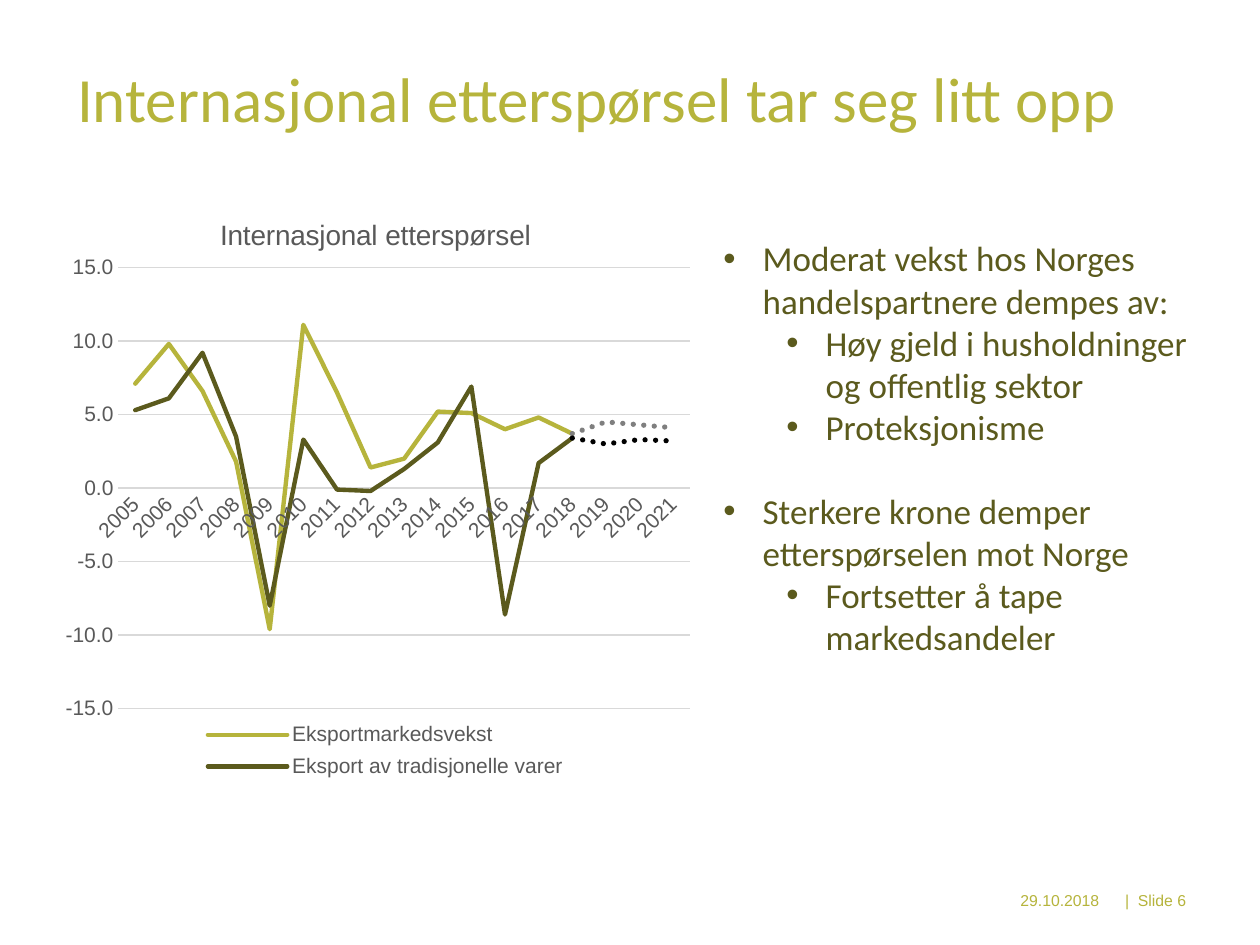
from lxml import etree
from pptx import Presentation
from pptx.chart.data import CategoryChartData
from pptx.dml.color import RGBColor
from pptx.enum.chart import XL_CHART_TYPE, XL_LEGEND_POSITION, XL_MARKER_STYLE, XL_TICK_MARK
from pptx.enum.dml import MSO_LINE
from pptx.enum.text import MSO_ANCHOR, MSO_AUTO_SIZE, PP_ALIGN
from pptx.oxml.ns import qn
from pptx.util import Cm, Pt

LINE_CHART = XL_CHART_TYPE.LINE
BOTTOM = XL_LEGEND_POSITION.BOTTOM
NO_MARKER = XL_MARKER_STYLE.NONE
NO_TICK = XL_TICK_MARK.NONE
SOLID, DOTTED = MSO_LINE.SOLID, MSO_LINE.ROUND_DOT
MIDDLE, TOP = MSO_ANCHOR.MIDDLE, MSO_ANCHOR.TOP
LEFT, RIGHT = PP_ALIGN.LEFT, PP_ALIGN.RIGHT
NO_AUTOFIT = MSO_AUTO_SIZE.NONE

COLORS = {
    "lime": "B6B43C", "olive": "5B5A1D", "gray": "7F7F7F",
    "black": "000000", "label": "595959", "grid": "D9D9D9",
}
YEARS = [str(year) for year in range(2005, 2022)]
FORECAST_START = YEARS.index("2018")
HISTORY_GAP = [None] * FORECAST_START
FORECAST_GAP = [None] * (len(YEARS) - FORECAST_START - 1)
SERIES = [  # name, values, colour, width, dash
    ("Eksportmarkedsvekst",
     [7.1, 9.8, 6.6, 1.8, -9.6, 11.1, 6.5, 1.4, 2, 5.2, 5.1, 4, 4.8, 3.7] + FORECAST_GAP,
     "lime", 2.5, SOLID),
    ("Eksport av tradisjonelle varer",
     [5.3, 6.1, 9.2, 3.5, -8, 3.3, -0.1, -0.2, 1.3, 3.1, 6.9, -8.6, 1.7, 3.4] + FORECAST_GAP,
     "olive", 2.5, SOLID),
    ("", HISTORY_GAP + [3.7, 4.5, 4.3, 4.1], "gray", 3, DOTTED),
    ("", HISTORY_GAP + [3.4, 3, 3.3, 3.2], "black", 3, DOTTED),
]
POINTS = [  # level, text, space before
    (0, "Moderat vekst hos Norges handelspartnere dempes av:", 0),
    (1, "Høy gjeld i husholdninger og offentlig sektor", 0),
    (1, "Proteksjonisme", 0),
    (0, "Sterkere krone demper etterspørselen mot Norge", 24),
    (1, "Fortsetter å tape markedsandeler", 0),
]


def rgb(name):
    return RGBColor.from_string(COLORS[name])


def set_font(font, color, size, name="Arial"):
    values = {"name": name, "size": Pt(size), "bold": False}
    for attribute, value in values.items():
        setattr(font, attribute, value)
    font.color.rgb = rgb(color)


def place(shape, box):
    for attribute, value in zip(("left", "top", "width", "height"), box):
        setattr(shape, attribute, Cm(value))


def add_title(slide, box):
    title = slide.shapes.title
    place(title, box)
    frame = title.text_frame
    frame.text = "Internasjonal etterspørsel tar seg litt opp"
    frame.auto_size = NO_AUTOFIT
    frame.vertical_anchor = MIDDLE
    heading = frame.paragraphs[0]
    heading.alignment = LEFT
    heading.line_spacing = 0.9
    set_font(heading.font, "lime", 36, "Calibri")


def add_points(slide, box):
    body = slide.placeholders[1]
    place(body, box)
    frame = body.text_frame
    frame.auto_size = NO_AUTOFIT
    frame.vertical_anchor = TOP
    for index, (level, text, gap) in enumerate(POINTS):
        point = frame.add_paragraph() if index else frame.paragraphs[0]
        point.text = text
        point.level = level
        point.space_before = Pt(gap)
        properties = point._p.get_or_add_pPr()
        properties.set("marL", str(Cm(0.79 + 1.27 * level)))
        properties.set("indent", str(Cm(-0.79)))
        etree.SubElement(properties, qn("a:buFont"), typeface="Arial")
        etree.SubElement(properties, qn("a:buChar"), char="•")
        set_font(point.font, "olive", 20, "Calibri")


def set_layout(parent, position, **values):
    """Fix the place of a chart part, in fractions of the chart."""
    for old in parent.findall(qn("c:layout")):
        parent.remove(old)
    layout = etree.Element(qn("c:layout"))
    manual = etree.SubElement(layout, qn("c:manualLayout"))
    for tag, value in values.items():
        etree.SubElement(manual, qn("c:" + tag), val=str(value))
    parent.insert(position, layout)


def format_axes(chart):
    years, growth = chart.category_axis, chart.value_axis
    for axis in (years, growth):
        axis.major_tick_mark = axis.minor_tick_mark = NO_TICK
        set_font(axis.tick_labels.font, "label", 12)
    years.has_major_gridlines = False
    years.tick_labels.font._element.getparent().getparent().getparent()
    slant = years._element.find(qn("c:txPr")).find(qn("a:bodyPr"))
    slant.set("rot", str(-45 * 60000))
    slant.set("vert", "horz")
    scale = {"minimum_scale": -15, "maximum_scale": 15, "major_unit": 5,
             "has_major_gridlines": True}
    for attribute, value in scale.items():
        setattr(growth, attribute, value)
    growth.tick_labels.number_format = "0.0"
    growth.tick_labels.number_format_is_linked = False
    growth.format.line.fill.background()
    for line in (years.format.line, growth.major_gridlines.format.line):
        line.color.rgb = rgb("grid")
        line.width = Pt(0.75)


def format_legend(chart):
    chart.has_legend = True
    legend = chart.legend
    legend.position = BOTTOM
    legend.include_in_layout = False
    set_font(legend.font, "label", 12)
    element = legend._element
    set_layout(element, 1, xMode="edge", yMode="edge", x=0.23, y=0.86, w=0.57, h=0.12)
    unnamed = [index for index, series in enumerate(SERIES) if not series[0]]
    for position, index in enumerate(unnamed, 1):
        entry = etree.Element(qn("c:legendEntry"))
        etree.SubElement(entry, qn("c:idx"), val=str(index))
        etree.SubElement(entry, qn("c:delete"), val="1")
        element.insert(position, entry)


def add_demand_chart(slide, box):
    data = CategoryChartData(number_format="0.0")
    data.categories = YEARS
    for name, values, *_ in SERIES:
        data.add_series(name, values)
    chart = slide.shapes.add_chart(LINE_CHART, *map(Cm, box), data).chart
    set_font(chart.font, "black", 12)
    chart.has_title = True
    chart.chart_title.include_in_layout = False
    heading = chart.chart_title.text_frame
    heading.text = "Internasjonal etterspørsel"
    set_font(heading.paragraphs[0].runs[0].font, "label", 16)
    plot = chart.plots[0]
    plot.vary_by_categories = False
    for series, (_, _, color, width, dash) in zip(plot.series, SERIES):
        series.smooth = False
        series.marker.style = NO_MARKER
        line = series.format.line
        line.color.rgb = rgb(color)
        line.width = Pt(width)
        line.dash_style = dash
        line._ln.set("cap", "rnd")
    format_axes(chart)
    format_legend(chart)
    set_layout(chart._chartSpace.chart.plotArea, 0, layoutTarget="inner", xMode="edge",
               yMode="edge", x=0.115, y=0.123, w=0.856, h=0.728)


def add_footer(slide, box):
    left, top, width, height = box
    number_width = 2.31
    date_box = (left, top, 2.95, height)
    number_box = (left + width - number_width, top, number_width, height)
    for text, area in (("29.10.2018", date_box), ("|  Slide 6", number_box)):
        frame = slide.shapes.add_textbox(*map(Cm, area)).text_frame
        frame.word_wrap = True
        frame.vertical_anchor = MIDDLE
        frame.text = text
        frame.paragraphs[0].alignment = RIGHT
        set_font(frame.paragraphs[0].font, "lime", 9)


def main():
    presentation = Presentation()
    presentation.slide_width, presentation.slide_height = Cm(25.4), Cm(19.05)
    slide = presentation.slides.add_slide(presentation.slide_layouts[1])
    add_title(slide, (1.3, 1.02, 22.86, 2.06))
    add_footer(slide, (19.46, 17.83, 4.7, 0.64))
    add_points(slide, (14.33, 4.65, 10.69, 8.81))
    add_demand_chart(slide, (0.84, 3.89, 13.46, 12.22))
    presentation.save("out.pptx")


if __name__ == "__main__":
    main()
